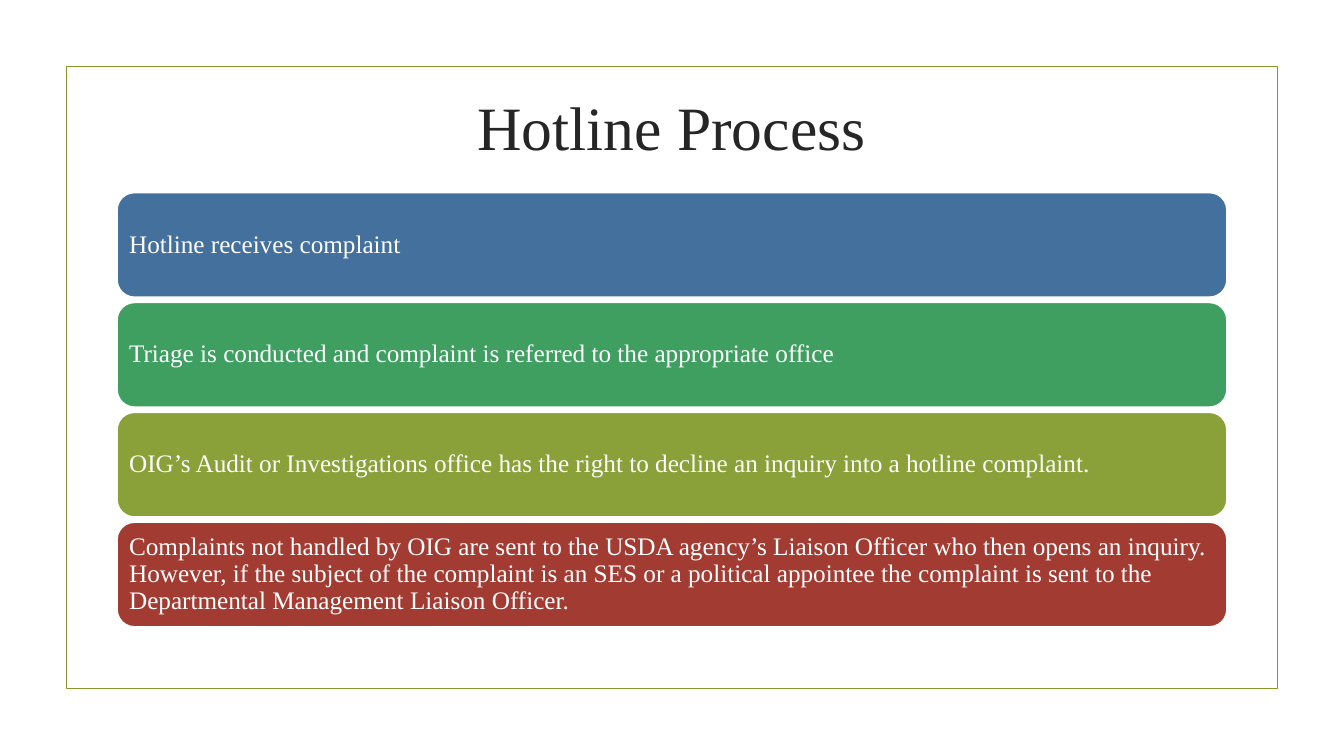
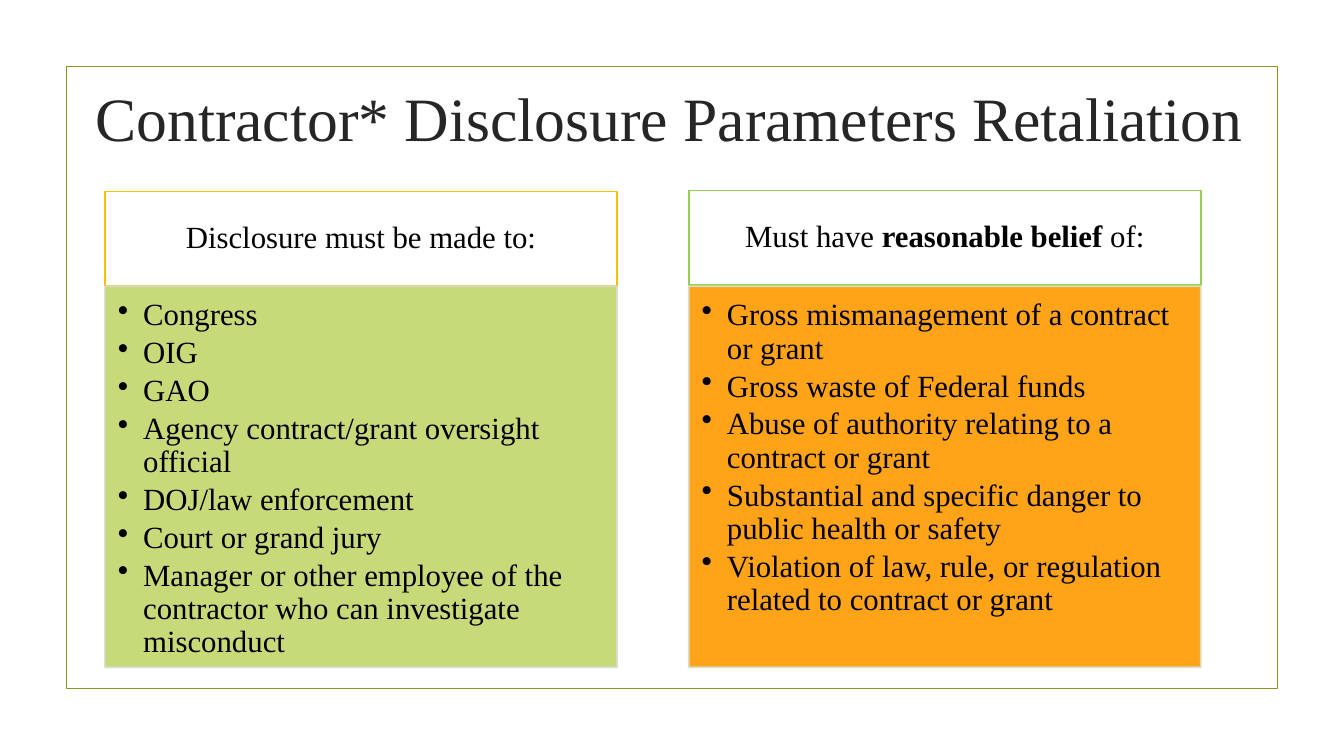
from dataclasses import dataclass

from lxml import etree
from pptx import Presentation
from pptx.dml.color import RGBColor
from pptx.enum.shapes import MSO_SHAPE
from pptx.enum.text import MSO_ANCHOR, MSO_AUTO_SIZE, PP_ALIGN
from pptx.oxml.ns import qn
from pptx.util import Inches, Pt

FONT = "Times New Roman"
WHITE, BLACK, TITLE_COLOR = "FFFFFF", "000000", "262626"
FRAME_COLOR, PANEL_LINE = "83992A", "D9DECD"
LINE_WIDTH = 1.25
PANEL_OPACITY = 90

BAR_LEFT, BAR_TOP, BAR_WIDTH, BAR_HEIGHT, BAR_GAP = 1.16, 1.91, 11.01, 1.04, 0.05
COLUMN_WIDTH, HEADER_HEIGHT, PANEL_TOP, PANEL_HEIGHT = 5.08, 0.94, 2.84, 3.78


@dataclass(frozen=True)
class Area:
    left: float
    top: float
    width: float
    height: float

    def lengths(self) -> tuple:
        return tuple(Inches(n) for n in (self.left, self.top, self.width, self.height))


@dataclass(frozen=True)
class Span:
    text: str
    bold: bool = False


@dataclass(frozen=True)
class Step:
    text: str
    color: str


@dataclass(frozen=True)
class Column:
    left: float
    header_top: float
    header: tuple[Span, ...]
    header_line: str
    panel_color: str
    items: tuple[str, ...]


STEPS = (
    Step("Hotline receives complaint", "44709D"),
    Step("Triage is conducted and complaint is referred to the appropriate office", "3E9F61"),
    Step("OIG’s Audit or Investigations office has the right to decline an inquiry "
         "into a hotline complaint.", "89A138"),
    Step("Complaints not handled by OIG are sent to the USDA agency’s Liaison Officer "
         "who then opens an inquiry. However, if the subject of the complaint is an SES "
         "or a political appointee the complaint is sent to the Departmental Management "
         "Liaison Officer.", "A23C33"),
)

COLUMNS = (
    Column(1.04, 1.9, (Span("Disclosure must be made to:"),), "FFC000", "C1D66B", (
        "Congress",
        "OIG",
        "GAO",
        "Agency contract/grant oversight official",
        "DOJ/law enforcement",
        "Court or grand jury",
        "Manager or other employee of the contractor who can investigate misconduct",
    )),
    Column(6.83, 1.89,
           (Span("Must have "), Span("reasonable belief", True), Span(" of:")),
           "92D050", "FF9900", (
        "Gross mismanagement of a contract or grant",
        "Gross waste of Federal funds",
        "Abuse of authority relating to a contract or grant",
        "Substantial and specific danger to public health or safety",
        "Violation of law, rule, or regulation related to contract or grant",
    )),
)


def rgb(color: str) -> RGBColor:
    return RGBColor.from_string(color)


def set_opacity(fill_parent, percent: int) -> None:
    """Make the solid fill directly under the given XML element translucent."""
    color = fill_parent.find(qn("a:solidFill")).find(qn("a:srgbClr"))
    etree.SubElement(color, qn("a:alpha")).set("val", str(percent * 1000))


def add_box(page, kind: MSO_SHAPE, area: Area, line: str, fill: str | None = None):
    box = page.shapes.add_shape(kind, *area.lengths())
    box.shadow.inherit = False
    if fill is None:
        box.fill.background()
    else:
        box.fill.solid()
        box.fill.fore_color.rgb = rgb(fill)
    box.line.color.rgb = rgb(line)
    box.line.width = Pt(LINE_WIDTH)
    return box


def set_frame(frame, anchor: MSO_ANCHOR, left: float, top: float,
              right: float, bottom: float) -> None:
    frame.word_wrap = True
    frame.auto_size = MSO_AUTO_SIZE.NONE
    frame.vertical_anchor = anchor
    frame.margin_left, frame.margin_top = Inches(left), Inches(top)
    frame.margin_right, frame.margin_bottom = Inches(right), Inches(bottom)


def add_spans(para, spans: tuple[Span, ...], size: float, color: str) -> None:
    for span in spans:
        run = para.add_run()
        run.text = span.text
        run.font.name = FONT
        run.font.size = Pt(size)
        run.font.bold = span.bold
        run.font.color.rgb = rgb(color)


def add_bullet(para) -> None:
    properties = para._p.get_or_add_pPr()
    properties.set("marL", str(Inches(0.25)))
    properties.set("indent", str(Inches(-0.25)))
    etree.SubElement(properties, qn("a:buChar")).set("char", "•")


def add_page(deck, title: str, area: Area):
    """Add a slide with the shared border and title style."""
    page = deck.slides.add_slide(deck.slide_layouts[5])
    add_box(page, MSO_SHAPE.RECTANGLE, Area(0.66, 0.66, 12.01, 6.17), FRAME_COLOR)
    heading = page.shapes.title
    heading.left, heading.top, heading.width, heading.height = area.lengths()
    set_frame(heading.text_frame, MSO_ANCHOR.MIDDLE, 0, 0.05, 0, 0.05)
    para = heading.text_frame.paragraphs[0]
    para.alignment = PP_ALIGN.CENTER
    add_spans(para, (Span(title),), 44, TITLE_COLOR)
    return page


def add_step(page, index: int, step: Step) -> None:
    top = BAR_TOP + index * (BAR_HEIGHT + BAR_GAP)
    area = Area(BAR_LEFT, top, BAR_WIDTH, BAR_HEIGHT)
    box = add_box(page, MSO_SHAPE.ROUNDED_RECTANGLE, area, WHITE, step.color)
    set_frame(box.text_frame, MSO_ANCHOR.MIDDLE, 0.07, 0.07, 0.07, 0.07)
    para = box.text_frame.paragraphs[0]
    para.alignment = PP_ALIGN.LEFT
    para.line_spacing = 0.9
    add_spans(para, (Span(step.text),), 18, WHITE)


def add_column(page, column: Column) -> None:
    header_area = Area(column.left, column.header_top, COLUMN_WIDTH, HEADER_HEIGHT)
    header = add_box(page, MSO_SHAPE.RECTANGLE, header_area, column.header_line, WHITE)
    set_frame(header.text_frame, MSO_ANCHOR.MIDDLE, 0.17, 0.1, 0.17, 0.1)
    para = header.text_frame.paragraphs[0]
    para.alignment = PP_ALIGN.CENTER
    para.line_spacing = 0.9
    add_spans(para, column.header, 22, BLACK)

    panel_area = Area(column.left, PANEL_TOP, COLUMN_WIDTH, PANEL_HEIGHT)
    panel = add_box(page, MSO_SHAPE.RECTANGLE, panel_area, PANEL_LINE, column.panel_color)
    properties = panel._element.spPr
    set_opacity(properties, PANEL_OPACITY)
    set_opacity(properties.find(qn("a:ln")), PANEL_OPACITY)
    frame = panel.text_frame
    set_frame(frame, MSO_ANCHOR.TOP, 0.13, 0.13, 0.17, 0.19)
    for index, item in enumerate(column.items):
        para = frame.add_paragraph() if index else frame.paragraphs[0]
        add_bullet(para)
        para.alignment = PP_ALIGN.LEFT
        para.line_spacing = 0.9
        para.space_after = Pt(3.3)
        add_spans(para, (Span(item),), 22, BLACK)


def main() -> None:
    deck = Presentation()
    deck.slide_width, deck.slide_height = Inches(13.33), Inches(7.5)

    page = add_page(deck, "Hotline Process", Area(1.41, 0.81, 10.5, 0.87))
    for index, step in enumerate(STEPS):
        add_step(page, index, step)

    page = add_page(deck, "Contractor* Disclosure Parameters Retaliation",
                    Area(0.82, 0.76, 11.65, 0.8))
    for column in COLUMNS:
        add_column(page, column)

    deck.save("out.pptx")


if __name__ == "__main__":
    main()
